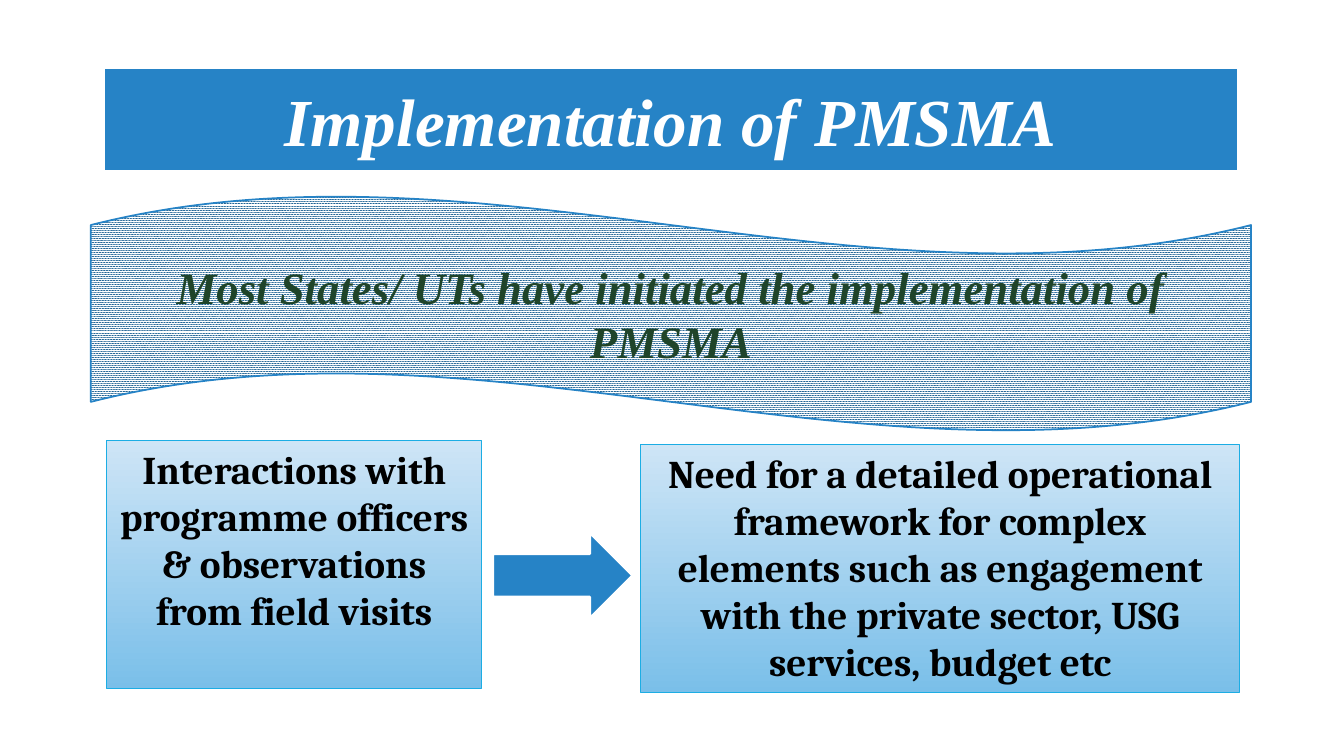
from dataclasses import dataclass
from typing import Optional

from pptx import Presentation
from pptx import util as u
from pptx.dml.color import RGBColor
from pptx.enum import dml, shapes, text


@dataclass(frozen=True)
class Theme:
    white: str = "FFFFFF"
    black: str = "000000"
    blue: str = "2683C6"
    dark_blue: str = "1D6294"
    cyan: str = "1CADE4"
    dark_green: str = "1F442A"
    gradient: tuple[str, str] = ("CEE5F6", "7ABFE9")
    heading_font: str = "Times New Roman"
    body_font: str = "Cambria"
    title_size: int = 48
    banner_size: int = 32
    body_size: int = 28


THEME = Theme()


@dataclass(frozen=True)
class Panel:
    """A filled shape; left, top, width and height are in centimetres."""
    left: float
    top: float
    width: float
    height: float
    kind: shapes.MSO_SHAPE = shapes.MSO_SHAPE.RECTANGLE
    fill: str = "solid"
    line: str = THEME.white
    line_width: float = 2
    words: str = ""
    size: int = THEME.body_size
    font: str = THEME.heading_font
    color: str = THEME.white
    italic: bool = True
    anchor: text.MSO_ANCHOR = text.MSO_ANCHOR.MIDDLE


def gradient_box(left: float, top: float, width: float, words: str) -> Panel:
    return Panel(left, top, width, 6.25, fill="gradient", line=THEME.cyan,
                 line_width=0.75, words=words, font=THEME.body_font,
                 color=THEME.black, italic=False, anchor=text.MSO_ANCHOR.TOP)


PANELS = [
    Panel(2.62, 1.7, 28.58, 2.62, words="Implementation of PMSMA",
          size=THEME.title_size),
    Panel(2.29, 4.93, 29.24, 5.94, kind=shapes.MSO_SHAPE.WAVE, fill="pattern",
          line=THEME.blue, line_width=1.25,
          words="Most States/ UTs have initiated the implementation of PMSMA",
          size=THEME.banner_size, color=THEME.dark_green),
    gradient_box(2.69, 11.1, 9.45,
                 "Interactions with programme officers & observations from field visits"),
    gradient_box(16.15, 11.2, 15.09,
                 "Need for a detailed operational framework for complex elements such as "
                 "engagement with the private sector, USG services, budget etc"),
    Panel(12.42, 13.41, 3.53, 2.18, kind=shapes.MSO_SHAPE.RIGHT_ARROW),
]


def rgb(color: str) -> RGBColor:
    return RGBColor.from_string(color)


def apply_fill(shape, style: str) -> None:
    fill = shape.fill
    if style == "gradient":
        fill.gradient()
        fill.gradient_angle = 270
        for stop, position, color in zip(fill.gradient_stops, (0, 1), THEME.gradient):
            stop.position = position
            stop.color.rgb = rgb(color)
    elif style == "pattern":
        fill.patterned()
        fill.pattern = dml.MSO_PATTERN.PERCENT_90
        fill.fore_color.rgb = rgb(THEME.white)
        fill.back_color.rgb = rgb(THEME.dark_blue)
    else:
        fill.solid()
        fill.fore_color.rgb = rgb(THEME.blue)


def write_text(shape, words: str, *, size: int, font: str, color: str,
               italic: bool, anchor: Optional[text.MSO_ANCHOR] = None) -> None:
    frame = shape.text_frame
    frame.word_wrap = True
    frame.vertical_anchor = anchor
    paragraph = frame.paragraphs[0]
    paragraph.alignment = text.PP_ALIGN.CENTER
    run = paragraph.add_run()
    run.text = words
    run.font.name = font
    run.font.size = u.Pt(size)
    run.font.bold = True
    run.font.italic = italic
    run.font.color.rgb = rgb(color)


def draw_panel(slide, panel: Panel) -> None:
    shape = slide.shapes.add_shape(panel.kind, u.Cm(panel.left), u.Cm(panel.top),
                                   u.Cm(panel.width), u.Cm(panel.height))
    shape.shadow.inherit = False
    apply_fill(shape, panel.fill)
    shape.line.color.rgb = rgb(panel.line)
    shape.line.width = u.Pt(panel.line_width)
    if panel.words:
        write_text(shape, panel.words, size=panel.size, font=panel.font,
                   color=panel.color, italic=panel.italic, anchor=panel.anchor)


def main() -> None:
    presentation = Presentation()
    presentation.slide_width = u.Cm(33.87)
    presentation.slide_height = u.Cm(19.05)
    slide = presentation.slides.add_slide(presentation.slide_layouts[6])
    for panel in PANELS:
        draw_panel(slide, panel)
    presentation.save("out.pptx")


if __name__ == "__main__":
    main()
